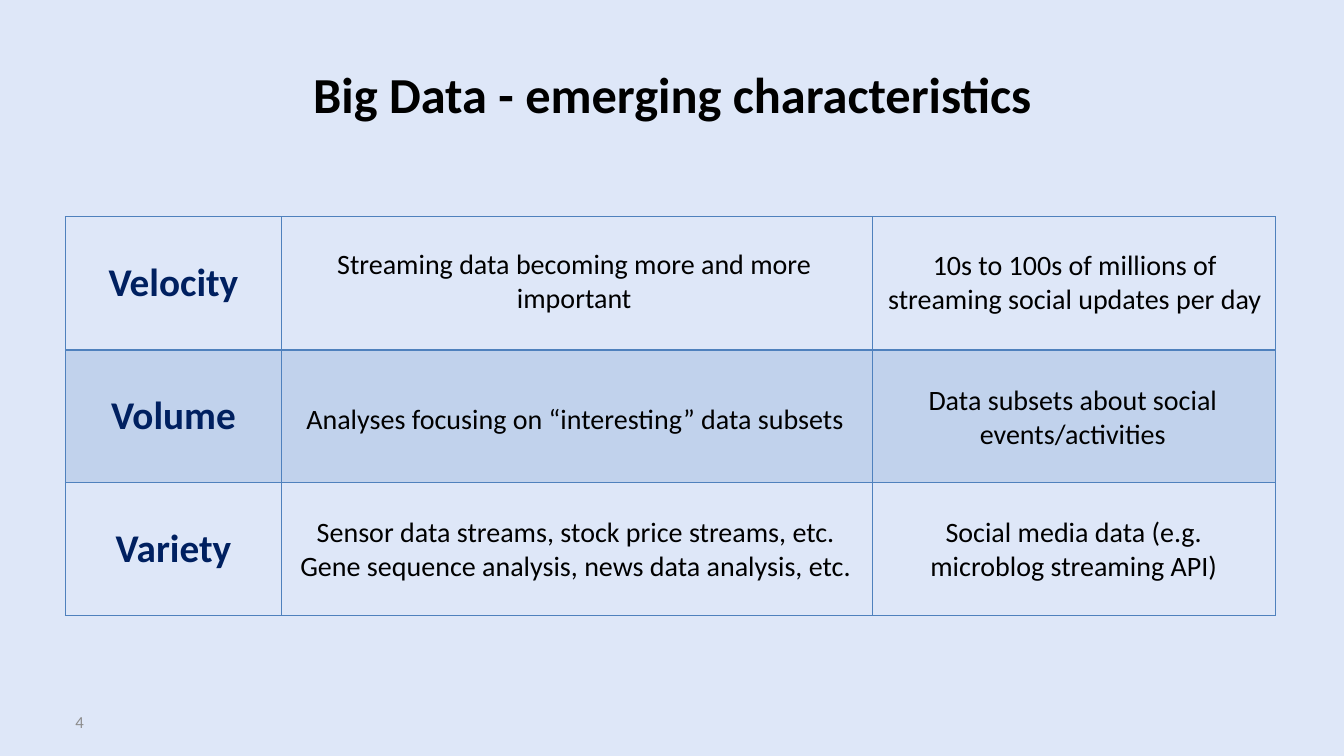
"""Build the slide on the emerging characteristics of big data."""
import dataclasses
import typing

import lxml.etree
import pptx
import pptx.dml.color
import pptx.enum.text
import pptx.oxml.ns
import pptx.util

PX = 9144
BACKGROUND = pptx.dml.color.RGBColor(0xDE, 0xE7, 0xF8)
BLACK = pptx.dml.color.RGBColor(0x00, 0x00, 0x00)
NAVY = pptx.dml.color.RGBColor(0x00, 0x20, 0x60)
BLUE = pptx.dml.color.RGBColor(0x4F, 0x81, 0xBD)
GRAY = pptx.dml.color.RGBColor(0x8C, 0x8C, 0x8C)

LEFT = pptx.enum.text.PP_ALIGN.LEFT
CENTER = pptx.enum.text.PP_ALIGN.CENTER
TOP = pptx.enum.text.MSO_ANCHOR.TOP
MIDDLE = pptx.enum.text.MSO_ANCHOR.MIDDLE


@dataclasses.dataclass(frozen=True)
class TextStyle:
    size: int
    color: pptx.dml.color.RGBColor = BLACK
    bold: bool = False
    alignment: typing.Any = CENTER
    anchor: typing.Any = TOP


@dataclasses.dataclass(frozen=True)
class Label:
    left: int
    top: int
    width: int
    height: int
    lines: tuple[str, ...]
    style: TextStyle


TITLE_STYLE = TextStyle(36, bold=True, anchor=MIDDLE)
HEADING_STYLE = TextStyle(28, NAVY, bold=True, anchor=MIDDLE)
BODY_STYLE = TextStyle(20)
NUMBER_STYLE = TextStyle(12, GRAY, alignment=LEFT, anchor=MIDDLE)

TITLE = Label(67, 30, 1200, 125, ("Big Data - emerging characteristics",), TITLE_STYLE)
LABELS = (
    Label(65, 696, 311, 40, ("4",), NUMBER_STYLE),
    Label(310, 240, 519, 77, ("Streaming data becoming more and more important",), BODY_STYLE),
    Label(294, 393, 568, 44, ("Analyses focusing on “interesting” data subsets",),
          dataclasses.replace(BODY_STYLE, alignment=LEFT)),
    Label(287, 506, 568, 77, ("Sensor data streams, stock price streams, etc.",
                              "Gene sequence analysis, news data analysis, etc."), BODY_STYLE),
    Label(870, 241, 392, 77,
          ("10s to 100s of millions of streaming social updates per day",), BODY_STYLE),
    Label(868, 375, 392, 77, ("Data subsets about social events/activities",), BODY_STYLE),
    Label(870, 506, 390, 77, ("Social media data (e.g. microblog streaming API)",), BODY_STYLE),
)

HEADINGS = ("Velocity", "Volume", "Variety")
TABLE_LEFT, TABLE_TOP = 65, 215
COLUMN_WIDTHS = (214, 586, 400)
ROW_HEIGHT = 132
SHADED_ROW = 1


def px(length: int) -> pptx.util.Emu:
    return pptx.util.Emu(length * PX)


def write_text(text_frame: typing.Any, lines: tuple[str, ...], style: TextStyle) -> None:
    text_frame.text = "\n".join(lines)
    font_format = {"name": "Calibri", "size": pptx.util.Pt(style.size), "bold": style.bold}
    for paragraph in text_frame.paragraphs:
        paragraph.alignment = style.alignment
        for run in paragraph.runs:
            for name, value in font_format.items():
                setattr(run.font, name, value)
            run.font.color.rgb = style.color


def fill_label(shape: typing.Any, label: Label) -> None:
    for name in ("left", "top", "width", "height"):
        setattr(shape, name, px(getattr(label, name)))
    shape.text_frame.word_wrap = True
    shape.text_frame.vertical_anchor = label.style.anchor
    write_text(shape.text_frame, label.lines, label.style)


def add_borders(cell: typing.Any, bottom_points: int) -> None:
    properties = cell._tc.get_or_add_tcPr()
    qualified = pptx.oxml.ns.qn
    for edge, points in {"lnL": 1, "lnR": 1, "lnT": 1, "lnB": bottom_points}.items():
        line = lxml.etree.SubElement(properties, qualified(f"a:{edge}"),
                                     w=str(pptx.util.Pt(points)))
        fill = lxml.etree.SubElement(line, qualified("a:solidFill"))
        lxml.etree.SubElement(fill, qualified("a:srgbClr"), val=str(BLUE))


def shade_cell(cell: typing.Any) -> None:
    cell.fill.solid()
    cell.fill.fore_color.rgb = BLUE
    color = cell._tc.tcPr.find(pptx.oxml.ns.qn("a:solidFill"))[0]
    lxml.etree.SubElement(color, pptx.oxml.ns.qn("a:alpha"), val="20000")


def add_characteristics_table(slide: typing.Any) -> None:
    table = slide.shapes.add_table(
        len(HEADINGS), len(COLUMN_WIDTHS), px(TABLE_LEFT), px(TABLE_TOP),
        px(sum(COLUMN_WIDTHS)), px(ROW_HEIGHT * len(HEADINGS))).table
    for name in ("first_row", "horz_banding"):
        setattr(table, name, False)
    for column, width in zip(table.columns, COLUMN_WIDTHS):
        column.width = px(width)
    for row_index, heading in enumerate(HEADINGS):
        table.rows[row_index].height = px(ROW_HEIGHT)
        for cell in table.rows[row_index].cells:
            add_borders(cell, 2 if row_index == 0 else 1)
            if row_index == SHADED_ROW:
                shade_cell(cell)
            else:
                cell.fill.background()
        heading_cell = table.cell(row_index, 0)
        heading_cell.vertical_anchor = HEADING_STYLE.anchor
        write_text(heading_cell.text_frame, (heading,), HEADING_STYLE)


def main() -> None:
    presentation = pptx.Presentation()
    presentation.slide_width, presentation.slide_height = px(1333), px(750)
    slide = presentation.slides.add_slide(presentation.slide_layouts[5])
    slide.background.fill.solid()
    slide.background.fill.fore_color.rgb = BACKGROUND
    fill_label(slide.shapes.title, TITLE)
    add_characteristics_table(slide)
    for label in LABELS:
        box = slide.shapes.add_textbox(px(label.left), px(label.top),
                                       px(label.width), px(label.height))
        fill_label(box, label)
    presentation.save("out.pptx")


if __name__ == "__main__":
    main()
